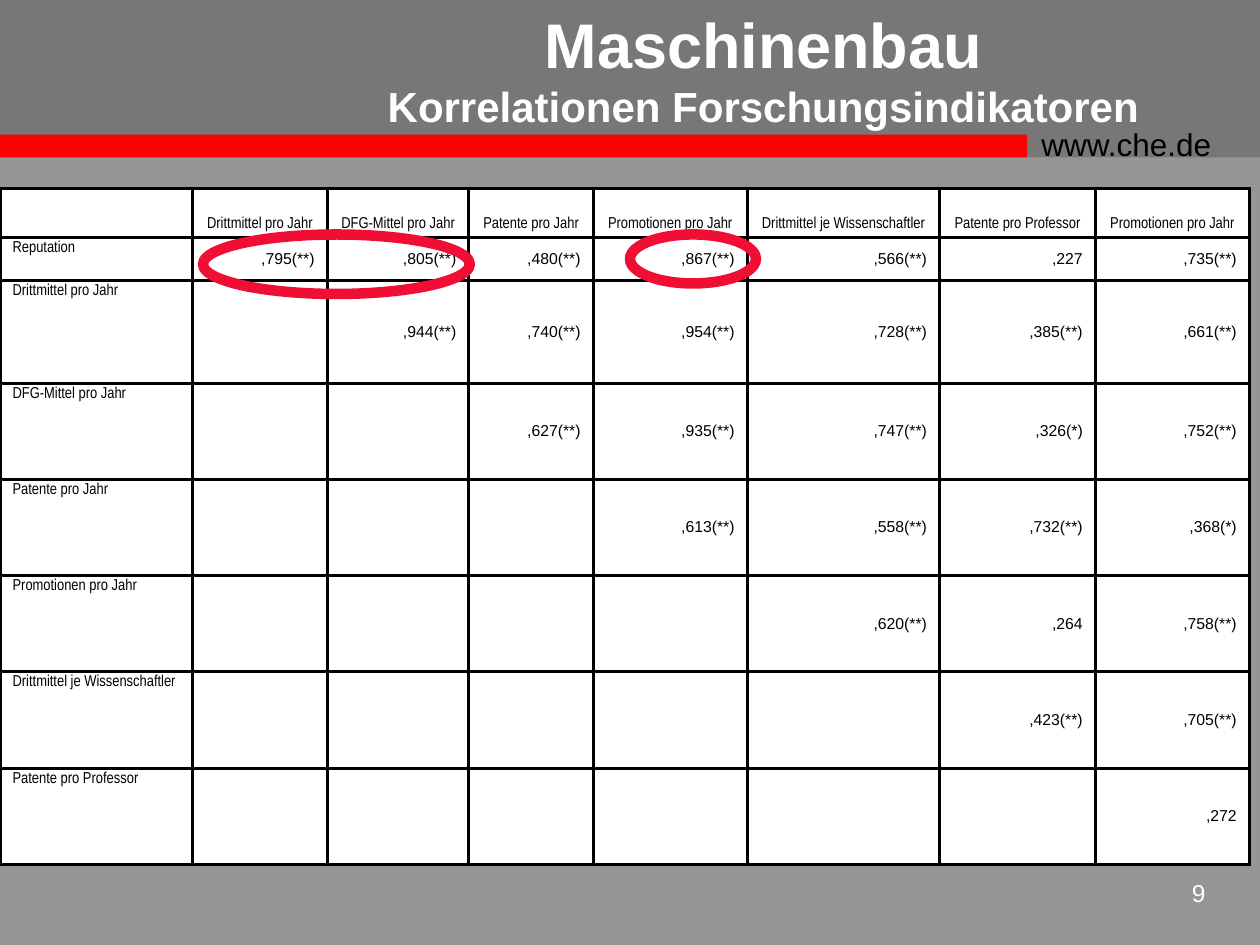
from lxml.etree import SubElement
from pptx import Presentation
from pptx.dml.color import RGBColor
from pptx.enum.shapes import MSO_SHAPE
from pptx.enum.text import MSO_ANCHOR, PP_ALIGN
from pptx.oxml.ns import qn
from pptx.util import Pt

BLACK = RGBColor(0, 0, 0)
WHITE = RGBColor(255, 255, 255)
RED = RGBColor(255, 0, 0)
CRIMSON = RGBColor(0xF0, 0x0E, 0x34)
GRAY = RGBColor(0x96, 0x96, 0x96)
DARK_GRAY = RGBColor(0x77, 0x77, 0x77)


def style(p, size, color, align, name="Arial"):
    p.alignment = align
    p.font.size = Pt(size)
    p.font.name = name
    p.font.color.rgb = color


def add_text(left, top, width, height, text, size, color, align):
    tf = s.shapes.add_textbox(Pt(left), Pt(top), Pt(width), Pt(height)).text_frame
    tf.word_wrap = True
    p = tf.paragraphs[0]
    p.text = text
    style(p, size, color, align)
    return tf


prs = Presentation()
prs.slide_width, prs.slide_height = Pt(720), Pt(540)
s = prs.slides.add_slide(prs.slide_layouts[6])
s.background.fill.solid()
s.background.fill.fore_color.rgb = GRAY

for top, width, height, color in [(0, 720, 90, DARK_GRAY), (77, 587, 13, RED)]:
    sp = s.shapes.add_shape(MSO_SHAPE.RECTANGLE, 0, Pt(top), Pt(width), Pt(height))
    sp.shadow.inherit = False
    sp.fill.solid()
    sp.fill.fore_color.rgb = color
    sp.line.fill.background()

add_text(588, 68, 126, 29, "www.che.de", 18, BLACK, PP_ALIGN.LEFT)
add_text(654, 498, 42, 30, "9", 14, WHITE, PP_ALIGN.RIGHT)
tf = add_text(178.5, 0, 515.5, 78, "Maschinenbau\vKorrelationen Forschungsindikatoren",
              36, WHITE, PP_ALIGN.CENTER)
tf.vertical_anchor = MSO_ANCHOR.MIDDLE
p = tf.paragraphs[0]
p.font.bold = True
p.runs[1].font.size = Pt(24)

headers = ["", "Drittmittel pro Jahr", "DFG-Mittel pro Jahr", "Patente pro Jahr",
           "Promotionen pro Jahr", "Drittmittel je Wissenschaftler",
           "Patente pro Professor", "Promotionen pro Jahr"]
labels = ["Reputation"] + headers[1:-1]
correlations = [
    [",795(**)", ",805(**)", ",480(**)", ",867(**)", ",566(**)", ",227", ",735(**)"],
    [",944(**)", ",740(**)", ",954(**)", ",728(**)", ",385(**)", ",661(**)"],
    [",627(**)", ",935(**)", ",747(**)", ",326(*)", ",752(**)"],
    [",613(**)", ",558(**)", ",732(**)", ",368(*)"],
    [",620(**)", ",264", ",758(**)"],
    [",423(**)", ",705(**)"],
    [",272"],
]
rows = [headers] + [[label] + [""] * i + values
                    for i, (label, values) in enumerate(zip(labels, correlations))]
col_widths = [110, 77, 81, 71, 88, 110, 89, 88]
row_heights = [28.5, 24.5, 58.5] + [55] * 5

table = s.shapes.add_table(len(rows), len(headers), 0, Pt(107.5),
                           Pt(sum(col_widths)), Pt(sum(row_heights))).table
for col, width in zip(table.columns, col_widths):
    col.width = Pt(width)
for row, height in zip(table.rows, row_heights):
    row.height = Pt(height)

for r, texts in enumerate(rows):
    for c, text in enumerate(texts):
        cell = table.cell(r, c)
        for side in ("lnL", "lnR", "lnT", "lnB"):
            ln = SubElement(cell._tc.get_or_add_tcPr(), qn(f"a:{side}"), w=str(Pt(2)))
            fill = SubElement(ln, qn("a:solidFill"))
            SubElement(fill, qn("a:srgbClr"), val=str(BLACK))
        cell.fill.solid()
        cell.fill.fore_color.rgb = WHITE
        if r == 0:
            anchor, align, name = MSO_ANCHOR.BOTTOM, PP_ALIGN.CENTER, "Arial Narrow"
        elif c == 0:
            anchor, align, name = MSO_ANCHOR.TOP, PP_ALIGN.LEFT, "Arial Narrow"
            cell.margin_top = Pt(2)
        else:
            anchor, align, name = MSO_ANCHOR.MIDDLE, PP_ALIGN.RIGHT, "Arial"
        cell.vertical_anchor = anchor
        p = cell.text_frame.paragraphs[0]
        p.text = text
        style(p, 9, BLACK, align, name)

for left, width, height in [(116, 152.5, 34), (360, 72, 28)]:
    sp = s.shapes.add_shape(MSO_SHAPE.OVAL, Pt(left), Pt(134), Pt(width), Pt(height))
    sp.shadow.inherit = False
    sp.fill.background()
    sp.line.color.rgb = CRIMSON
    sp.line.width = Pt(6)

prs.save("out.pptx")
